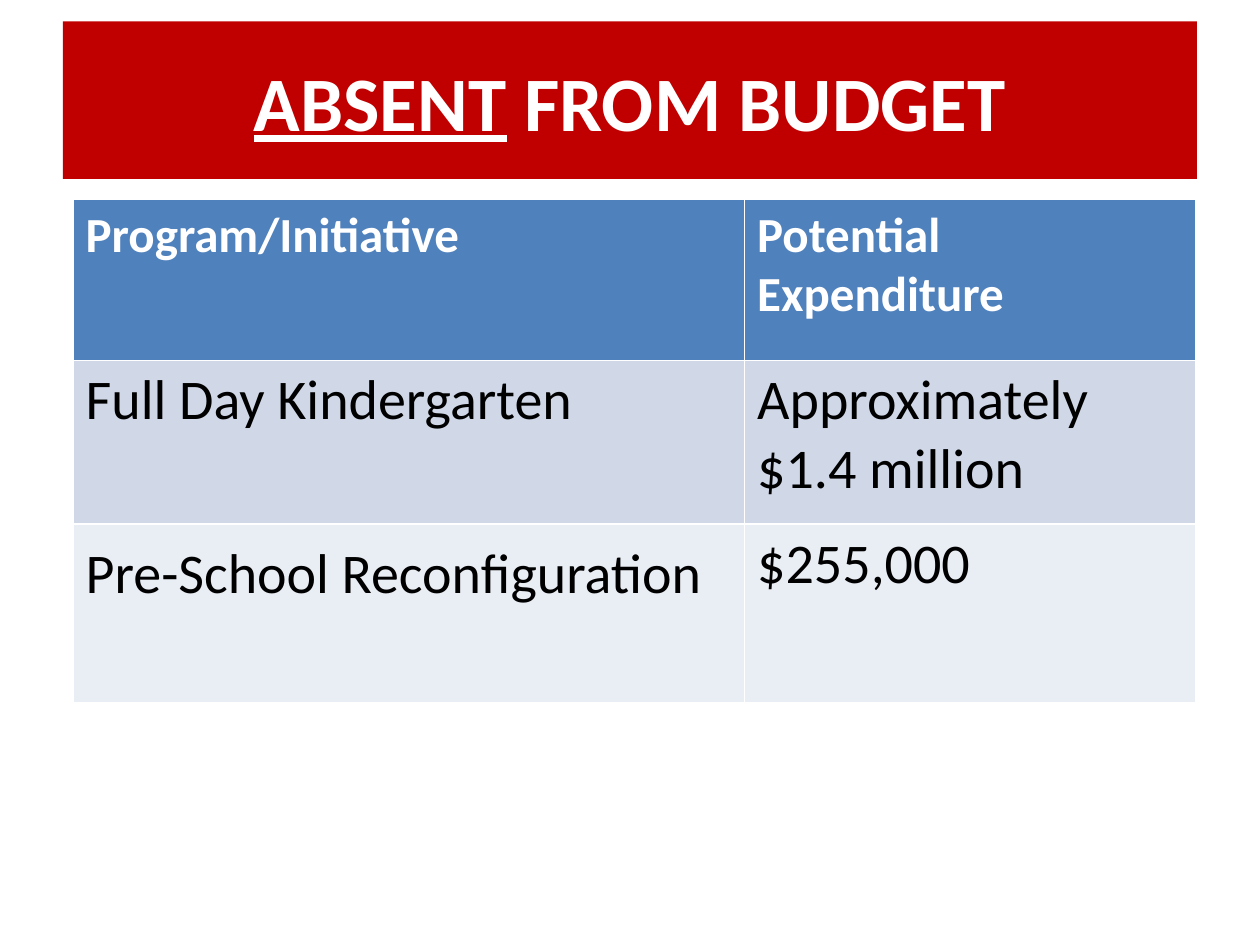
"""Build the slide listing programs absent from the budget."""
from pptx import Presentation
from pptx.dml.color import RGBColor
from pptx.enum.shapes import MSO_SHAPE
from pptx.enum.text import MSO_ANCHOR, PP_ALIGN
from pptx.util import Inches, Pt

RECT = MSO_SHAPE.RECTANGLE
MIDDLE = MSO_ANCHOR.MIDDLE
CENTER = PP_ALIGN.CENTER

COLORS = {
    "banner": "C00000",
    "header": "4F81BD",
    "odd": "D0D8E8",
    "even": "E9EDF4",
    "white": "FFFFFF",
    "black": "000000",
}
ROWS = [
    ("header", 1.28, ("Program/Initiative", "Potential Expenditure")),
    ("odd", 1.3, ("Full Day Kindergarten", "Approximately $1.4 million")),
    ("even", 1.42, ("Pre-School Reconfiguration", "$255,000")),
]


def fill(obj, color):
    obj.fill.solid()
    obj.fill.fore_color.rgb = RGBColor.from_string(COLORS[color])


def style(r, size, color, bold):
    r.font.name = "Calibri"
    r.font.size = Pt(size)
    r.font.bold = bold
    r.font.color.rgb = RGBColor.from_string(COLORS[color])


prs = Presentation()
prs.slide_width, prs.slide_height = Inches(10), Inches(7.5)
s = prs.slides.add_slide(prs.slide_layouts[6])

sp = s.shapes.add_shape(RECT, Inches(0.5), Inches(0.17), Inches(9), Inches(1.25))
sp.shadow.inherit = False
fill(sp, "banner")
sp.line.fill.background()
tf = sp.text_frame
tf.word_wrap = True
tf.vertical_anchor = MIDDLE
p = tf.paragraphs[0]
p.alignment = CENTER
for text, underline in (("ABSENT", True), (" FROM BUDGET", False)):
    r = p.add_run()
    r.text = text
    style(r, 44, "white", True)
    r.font.underline = underline

table = s.shapes.add_table(
    len(ROWS), 2, Inches(0.58), Inches(1.58), Inches(8.92), Inches(4)
).table
for col, width in zip(table.columns, (5.33, 3.58)):
    col.width = Inches(width)
for row, (band, height, texts) in zip(table.rows, ROWS):
    row.height = Inches(height)
    header = band == "header"
    for cell, text in zip(row.cells, texts):
        fill(cell, band)
        p = cell.text_frame.paragraphs[0]
        p.text = text
        if header:
            style(p.runs[0], 28, "white", True)
        else:
            style(p.runs[0], 32, "black", False)

p = table.cell(2, 0).text_frame.paragraphs[0]
p.line_spacing = 1.15
p.space_after = Pt(10)

prs.save("out.pptx")
